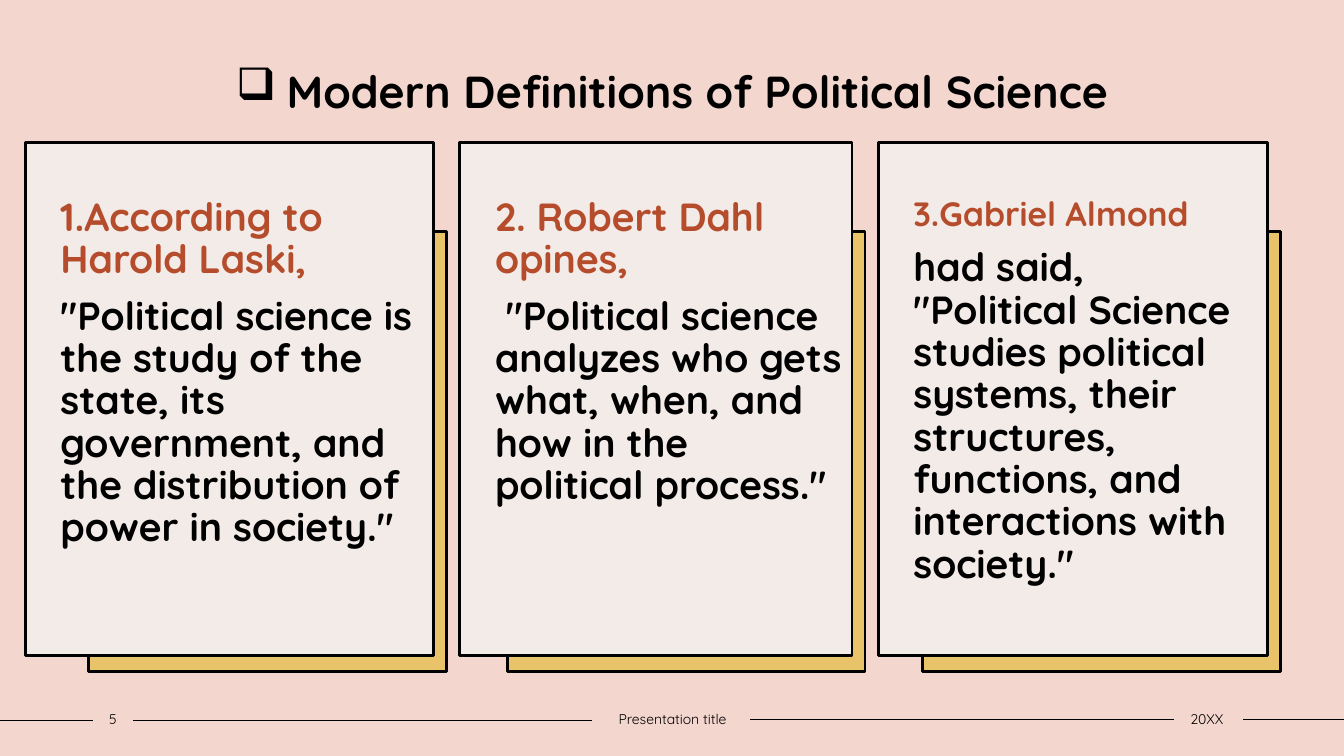
from lxml import etree
from pptx import Presentation
from pptx.dml.color import RGBColor
from pptx.enum.shapes import MSO_CONNECTOR as Connector, MSO_SHAPE as Shape
from pptx.enum.text import MSO_ANCHOR as Anchor, PP_ALIGN as Align
from pptx.oxml.ns import qn
from pptx.util import Inches, Pt

FONT = "Quicksand"
BLACK, PINK, GOLD, CREAM, RUST = "000000", "F3D6CD", "E9C369", "F3EBE8", "B54C2B"

# Card left, card width, backing left, heading, heading size, definition
CARDS = [
    (0.25, 4.05, 0.88, "1.According to Harold Laski,", 28,
     '"Political science is the study of the state, its government, '
     'and the distribution of power in society."'),
    (4.56, 3.89, 5.03, "2. Robert Dahl opines,", 28,
     ' "Political science analyzes who gets what, when, '
     'and how in the political process."'),
    (8.71, 3.86, 9.15, "3.Gabriel Almond", 24,
     'had said, "Political Science studies political systems, their '
     'structures, functions, and interactions with society."'),
]
# Start, end and height of each footer rule
FOOTER_RULES = [(0, 0.92, 7.15), (1.32, 5.87, 7.15),
                (7.44, 11.64, 7.14), (12.33, 13.33, 7.14)]
FOOTER_LABELS = [(0.92, 0.4, "5"), (5.87, 1.6, "Presentation title"),
                 (11.62, 0.7, "20XX")]


def color(value):
    return RGBColor.from_string(value)


def set_insets(frame, left, top, right, bottom):
    frame.margin_left, frame.margin_top = Inches(left), Inches(top)
    frame.margin_right, frame.margin_bottom = Inches(right), Inches(bottom)


def write(para, text, size, shade=BLACK, bold=False, align=Align.LEFT):
    para.text = text
    para.alignment = align
    para.font.name = FONT
    para.font.size = Pt(size)
    para.font.bold = bold
    para.font.color.rgb = color(shade)


def add_panel(slide, left, top, width, height, fill):
    panel = slide.shapes.add_shape(Shape.RECTANGLE, Inches(left), Inches(top),
                                   Inches(width), Inches(height))
    panel.shadow.inherit = False
    panel.fill.solid()
    panel.fill.fore_color.rgb = color(fill)
    panel.line.color.rgb = color(BLACK)
    panel.line.width = Pt(2)
    return panel


def add_card(slide, left, width, heading, heading_size, definition):
    frame = add_panel(slide, left, 1.41, width, 5.09, CREAM).text_frame
    frame.word_wrap = True
    frame.vertical_anchor = Anchor.TOP
    set_insets(frame, 0.35, 0.55, 0.1, 0.05)
    write(frame.paragraphs[0], heading, heading_size, RUST, bold=True)
    write(frame.add_paragraph(), definition, 28, bold=True)
    for para in frame.paragraphs:
        para.line_spacing = 0.9
        para.space_before = Pt(10)


def add_rule(slide, start, end, height):
    rule = slide.shapes.add_connector(Connector.STRAIGHT, Inches(start), Inches(height),
                                      Inches(end), Inches(height))
    rule.line.color.rgb = color(BLACK)
    rule.line.width = Pt(1)
    etree.SubElement(rule._element.spPr, qn("a:effectLst"))


def add_label(slide, left, top, width, height, text, size, bold=False):
    box = slide.shapes.add_textbox(Inches(left), Inches(top), Inches(width), Inches(height))
    frame = box.text_frame
    frame.word_wrap = True
    frame.vertical_anchor = Anchor.MIDDLE
    set_insets(frame, 0, 0.05, 0, 0.05)
    write(frame.paragraphs[0], text, size, bold=bold, align=Align.CENTER)
    return frame


def add_bullet(para, symbol, indent):
    properties = para._p.get_or_add_pPr()
    properties.set("marL", str(Inches(indent)))
    properties.set("indent", str(-Inches(indent)))
    bullet = etree.Element(qn("a:buChar"), char=symbol)
    properties.find(qn("a:defRPr")).addprevious(bullet)


def main():
    deck = Presentation()
    deck.slide_width, deck.slide_height = Inches(13.33), Inches(7.5)
    slide = deck.slides.add_slide(deck.slide_layouts[6])
    slide.background.fill.solid()
    slide.background.fill.fore_color.rgb = color(PINK)

    # Title
    title = add_label(slide, 1.25, 0.56, 10.84, 0.67,
                      "Modern Definitions of Political Science", 32, bold=True)
    add_bullet(title.paragraphs[0], "❑", 0.5)

    # Definition cards on gold backings
    for left, width, backing_left, heading, heading_size, definition in CARDS:
        add_panel(slide, backing_left, 2.3, 3.55, 4.36, GOLD)
        add_card(slide, left, width, heading, heading_size, definition)

    # Footer
    for start, end, height in FOOTER_RULES:
        add_rule(slide, start, end, height)
    for left, width, text in FOOTER_LABELS:
        add_label(slide, left, 7, width, 0.27, text, 10)

    deck.save("out.pptx")


if __name__ == "__main__":
    main()
